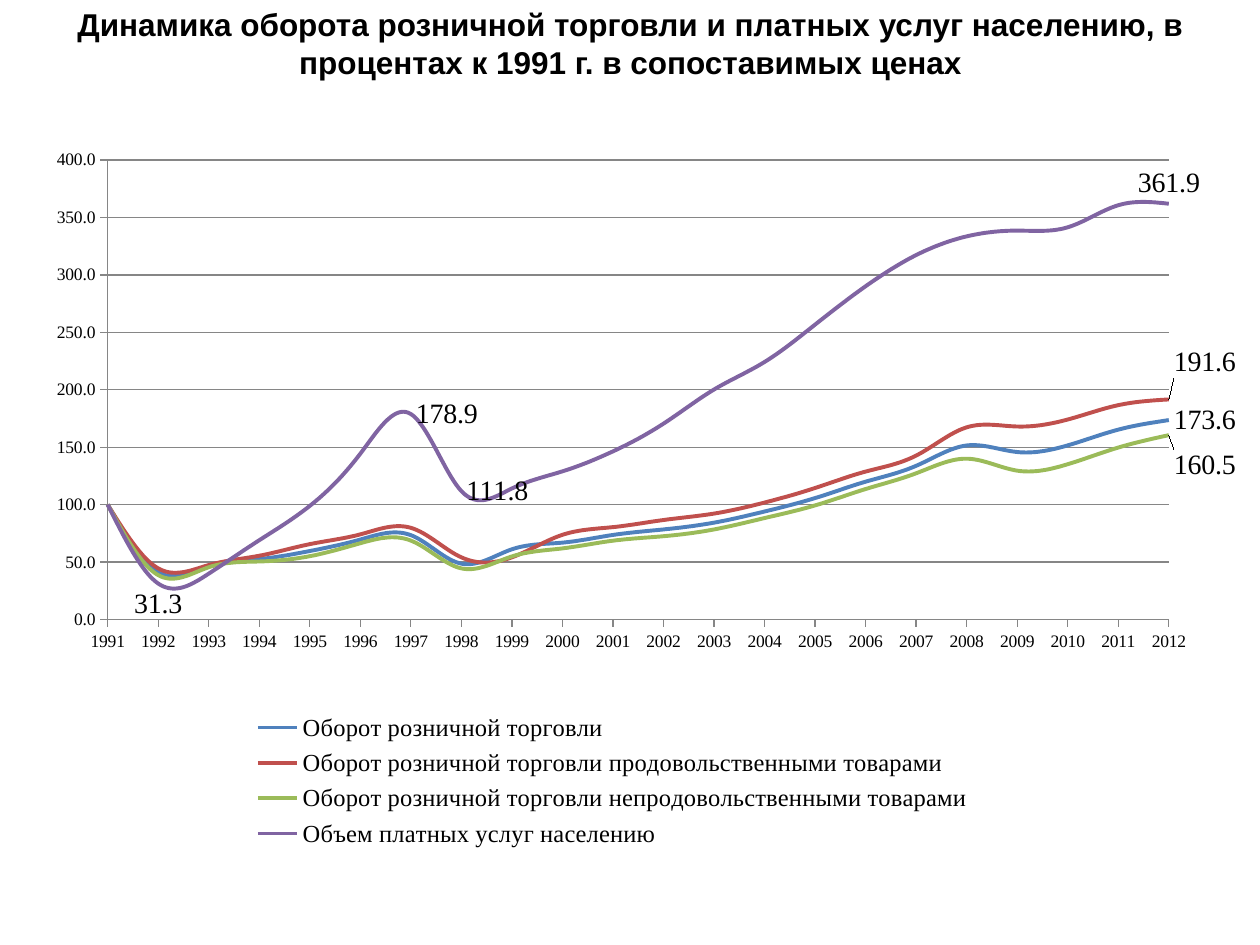
from lxml.etree import SubElement
from pptx import Presentation
from pptx.chart.data import CategoryChartData as Data
from pptx.dml.color import RGBColor
from pptx.enum.chart import XL_CHART_TYPE as Kind
from pptx.enum.chart import XL_LABEL_POSITION as Pos
from pptx.enum.chart import XL_LEGEND_POSITION as Side
from pptx.enum.chart import XL_TICK_MARK as Tick
from pptx.enum.text import PP_ALIGN as Align
from pptx.oxml.ns import qn
from pptx.util import Pt

PX = 914400 // 126
BLACK = RGBColor(0, 0, 0)
GREY = RGBColor(0x86, 0x86, 0x86)
BLUE = RGBColor(0x4F, 0x81, 0xBD)
RED = RGBColor(0xC0, 0x50, 0x4D)
GREEN = RGBColor(0x9B, 0xBB, 0x59)
VIOLET = RGBColor(0x80, 0x64, 0xA2)

TITLE = ("Динамика оборота розничной торговли и платных услуг населению, "
         "в процентах к 1991 г. в сопоставимых ценах")
YEARS = [str(year) for year in range(1991, 2013)]

# Name, colour, values, labels as {year: (side, shift down in parts of height)}
LINES = [
    ("Оборот розничной торговли", BLUE,
     [100, 41.1, 46.3, 52.6, 59.6, 69.6, 73.4, 48.6, 61.1, 66.9, 73.6,
      78.4, 84.3, 94, 105.7, 120, 133.8, 151.5, 145.8, 151.6, 165.3, 173.6],
     {"2012": (Pos.RIGHT, 0)}),
    ("Оборот розничной торговли продовольственными товарами", RED,
     [100, 44.5, 47.4, 55.5, 65.6, 74.1, 79.8, 54.1, 54.1, 73.7, 80.4,
      86.6, 92.2, 101.8, 114.5, 128.8, 142.7, 167.3, 168, 174.1, 186.6, 191.6],
     {"2012": (Pos.RIGHT, -0.05)}),
    ("Оборот розничной торговли непродовольственными товарами", GREEN,
     [100, 38.6, 45.5, 50.5, 55.1, 66.4, 68.7, 44.5, 54.9, 61.9, 68.6,
      72.5, 78.4, 88.3, 99.3, 113.6, 127.3, 140, 129.6, 135.2, 149.7, 160.5],
     {"2012": (Pos.RIGHT, 0.04)}),
    ("Объем платных услуг населению", VIOLET,
     [100, 31.3, 39.9, 69, 98.9, 144.4, 178.9, 111.8, 114.1, 129, 146.4,
      170.5, 200.2, 224.2, 256.7, 290.1, 317.2, 333.5, 338.5, 341.4, 360.6,
      361.9],
     {"1992": (Pos.BELOW, 0), "1997": (Pos.RIGHT, 0),
      "1998": (Pos.RIGHT, 0), "2012": (Pos.ABOVE, 0)}),
]


def scale(box):
    return [n * PX for n in box]


def set_font(font, size, name="Times New Roman", bold=False):
    font.size, font.name, font.bold = Pt(size), name, bold
    font.color.rgb = BLACK


def place(node, spot, **parts):
    """Give a chart part a manual layout, as child number `spot`."""
    for old in node.findall(qn("c:layout")):
        node.remove(old)
    layout = SubElement(node, qn("c:layout"))
    node.insert(spot, layout)
    manual = SubElement(layout, qn("c:manualLayout"))
    for key, val in parts.items():
        SubElement(manual, qn("c:" + key)).set("val", str(val))


def add_title(slide, box):
    frame = slide.shapes.add_textbox(*scale(box)).text_frame
    frame.word_wrap = True
    para = frame.paragraphs[0]
    para.text, para.alignment = TITLE, Align.CENTER
    set_font(para.font, 18, "Arial", True)


def style_axes(chart):
    years, values = chart.category_axis, chart.value_axis
    for axis in (years, values):
        axis.major_tick_mark, axis.minor_tick_mark = Tick.OUTSIDE, Tick.NONE
        axis.format.line.color.rgb = GREY
        set_font(axis.tick_labels.font, 10)
    values.minimum_scale, values.maximum_scale = 0, 400
    values.major_unit = 50
    values.has_major_gridlines = True
    values.major_gridlines.format.line.color.rgb = GREY
    labels = values.tick_labels
    labels.number_format, labels.number_format_is_linked = "0.0", False
    # Start the lines on the value axis itself
    node = values._element
    start = SubElement(node, qn("c:crossBetween"))
    start.set("val", "midCat")
    node.find(qn("c:crosses")).addnext(start)


def style_line(line, color, labels):
    line.smooth = True
    line.format.line.color.rgb = color
    line.format.line.width = Pt(2.25)
    line.data_labels.show_value = False
    for year, (side, shift) in labels.items():
        label = line.points[YEARS.index(year)].data_label
        set_font(label.font, 16)
        label.position = side
        if shift:
            node = line._element.find(".//" + qn("c:dLbl"))
            place(node, 1, x=0, y=shift)


def add_lines(slide, box):
    data = Data(number_format="0.0")
    data.categories = YEARS
    for name, _, vals, _ in LINES:
        data.add_series(name, vals)
    chart = slide.shapes.add_chart(Kind.LINE, *scale(box), data).chart
    chart.has_title = False
    set_font(chart.font, 10)
    style_axes(chart)

    plot = chart.plots[0]
    plot.vary_by_categories = False
    for line, (_, color, _, labels) in zip(plot.series, LINES):
        style_line(line, color, labels)
    place(chart._chartSpace.find(".//" + qn("c:plotArea")), 0,
          layoutTarget="inner", xMode="edge", yMode="edge",
          x=0.076, y=0.047, w=0.87, h=0.617)

    # Legend, one entry a row
    chart.has_legend = True
    legend = chart.legend
    legend.position, legend.include_in_layout = Side.BOTTOM, False
    set_font(legend.font, 14)
    place(legend._element, 1, xMode="edge", yMode="edge",
          x=0.18, y=0.78, w=0.62, h=0.2)


def main():
    deck = Presentation()
    deck.slide_width, deck.slide_height = scale((1260, 945))
    slide = deck.slides.add_slide(deck.slide_layouts[6])
    add_lines(slide, (15, 125, 1221, 745))
    add_title(slide, (25, -1, 1211, 89))
    deck.save("out.pptx")


if __name__ == "__main__":
    main()
